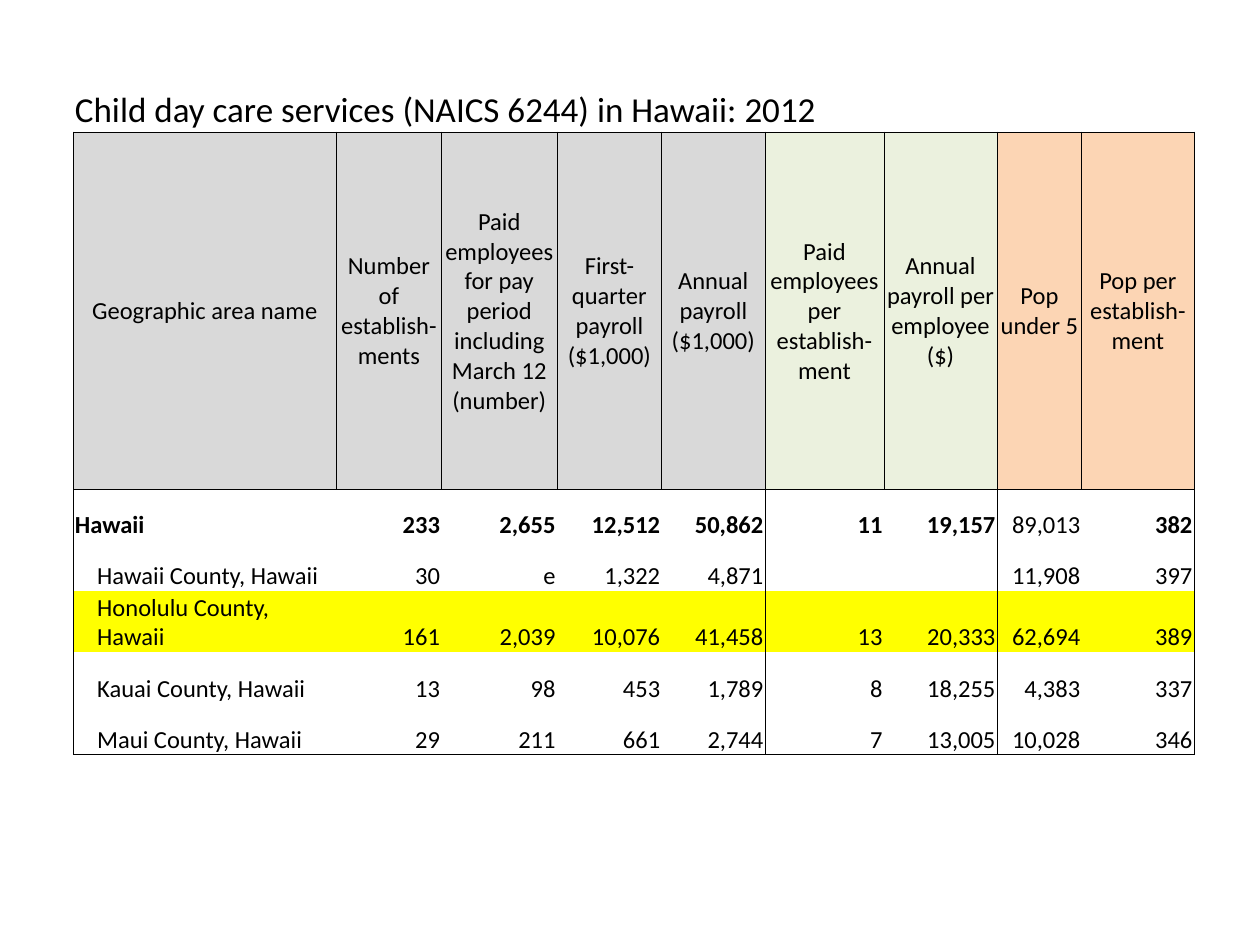
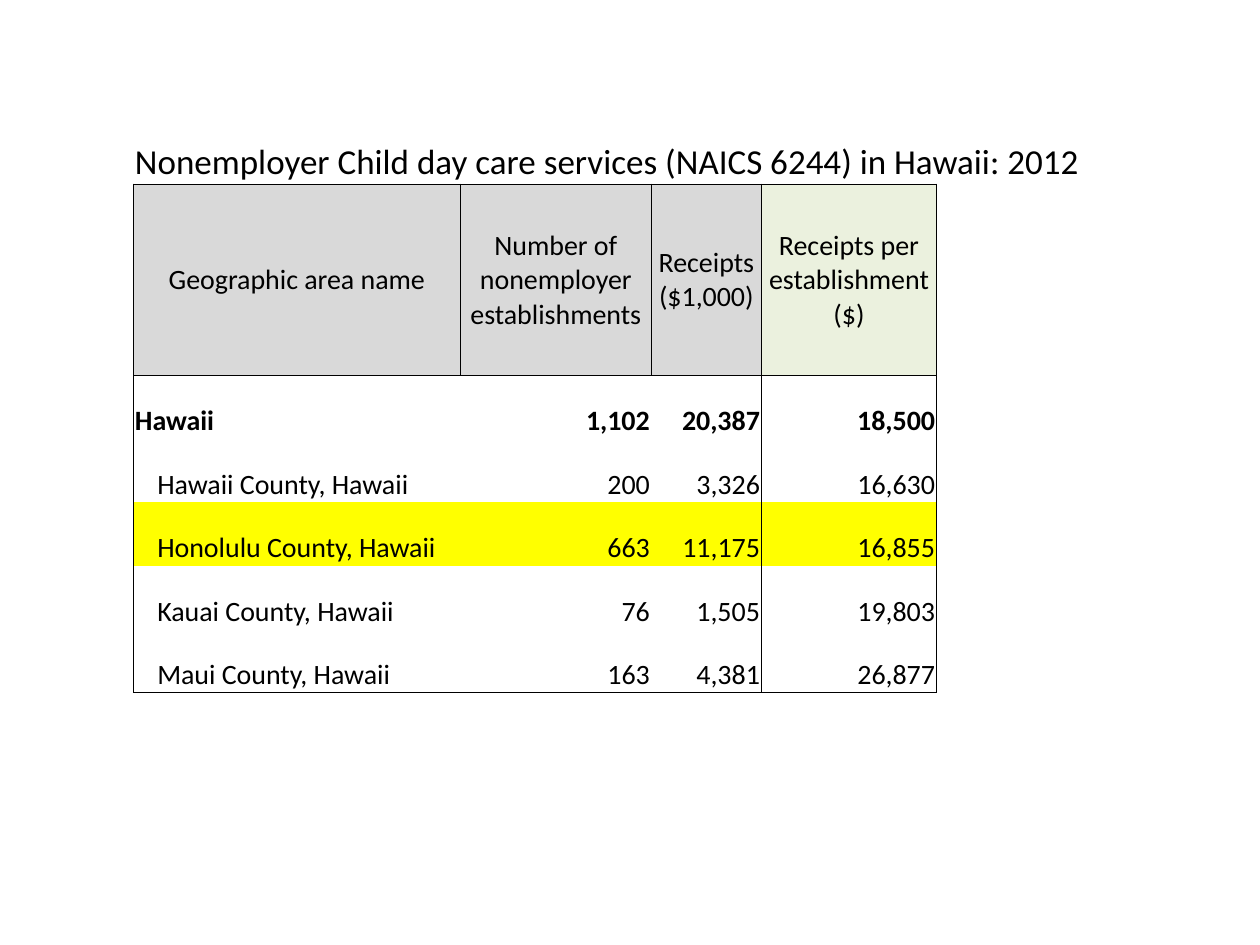
from lxml import etree
from pptx import Presentation
from pptx.dml.color import RGBColor
from pptx.enum.text import MSO_ANCHOR, PP_ALIGN
from pptx.oxml.ns import qn
from pptx.util import Cm, Pt

LEFT, CENTER, RIGHT = PP_ALIGN.LEFT, PP_ALIGN.CENTER, PP_ALIGN.RIGHT
MIDDLE, BOTTOM = MSO_ANCHOR.MIDDLE, MSO_ANCHOR.BOTTOM

# Shared look
COLORS = {"ink": "000000", "counts": "D9D9D9", "ratios": "EBF1DE",
          "population": "FCD5B4", "highlight": "FFFF00"}
FONT = "Calibri"
TITLE_SIZE = 20
TITLE_SPAN = 6
LINE_WIDTH = Pt(0.5)
PADDING, INDENT = Cm(0.03), Cm(0.48)
TITLE_ROW, HEADER_ROW, TOTAL_ROW, HIGHLIGHT_ROW = 0, 1, 2, 4

# Each column group is (fill name, column headings)
EMPLOYERS = {
    "title": "Child day care services (NAICS 6244) in Hawaii: 2012",
    "box": (1.48, 1.07),
    "size": 14,
    "widths": [5.3, 2.12, 2.33, 2.11, 2.08, 2.4, 2.28, 1.71, 2.26],
    "heights": [1.59, 7.2] + [1.03] * 5,
    "groups": [
        ("counts", ["Geographic area name", "Number of establish-ments",
                    "Paid employees for pay period including March 12 (number)",
                    "First-quarter payroll ($1,000)", "Annual payroll ($1,000)"]),
        ("ratios", ["Paid employees per establish-ment",
                    "Annual payroll per employee ($)"]),
        ("population", ["Pop under 5", "Pop per establish-ment"]),
    ],
    "plain_total": "Pop under 5",
    "rows": [
        ["Hawaii", "233", "2,655", "12,512", "50,862", "11", "19,157", "89,013", "382"],
        ["Hawaii County, Hawaii", "30", "e", "1,322", "4,871", "", "", "11,908", "397"],
        ["Honolulu County, Hawaii", "161", "2,039", "10,076", "41,458", "13", "20,333",
         "62,694", "389"],
        ["Kauai County, Hawaii", "13", "98", "453", "1,789", "8", "18,255", "4,383", "337"],
        ["Maui County, Hawaii", "29", "211", "661", "2,744", "7", "13,005", "10,028", "346"],
    ],
}
NONEMPLOYERS = {
    "title": "Nonemployer Child day care services (NAICS 6244) in Hawaii: 2012",
    "box": (2.69, 1.07),
    "size": 16,
    "widths": [6.59, 3.85, 2.22, 3.53, 2.59, 2.59],
    "heights": [2.64, 3.85] + [1.28] * 5,
    "groups": [
        ("counts", ["Geographic area name", "Number of nonemployer establishments",
                    "Receipts ($1,000)"]),
        ("ratios", ["Receipts per establishment ($)"]),
    ],
    "plain_total": None,
    "rows": [
        ["Hawaii", "1,102", "20,387", "18,500"],
        ["Hawaii County, Hawaii", "200", "3,326", "16,630"],
        ["Honolulu County, Hawaii", "663", "11,175", "16,855"],
        ["Kauai County, Hawaii", "76", "1,505", "19,803"],
        ["Maui County, Hawaii", "163", "4,381", "26,877"],
    ],
}


def write_cell(cell, text, size, align, anchor, bold=False, indent=PADDING):
    cell.margin_left, cell.margin_right = indent, PADDING
    cell.margin_top, cell.margin_bottom = PADDING, 0
    cell.vertical_anchor = anchor
    if not text:
        return
    p = cell.text_frame.paragraphs[0]
    p.alignment = align
    r = p.add_run()
    r.text = text
    r.font.name, r.font.size, r.font.bold = FONT, Pt(size), bold
    r.font.color.rgb = RGBColor.from_string(COLORS["ink"])


def set_borders(cell, drawn):
    """Draw the sides named in drawn and clear the others."""
    tc_pr = cell._tc.get_or_add_tcPr()
    for side in "LRTB":
        ln = etree.SubElement(tc_pr, qn(f"a:ln{side}"), w=str(LINE_WIDTH))
        if side in drawn:
            fill = etree.SubElement(ln, qn("a:solidFill"))
            etree.SubElement(fill, qn("a:srgbClr"), val=COLORS["ink"])
        else:
            etree.SubElement(ln, qn("a:noFill"))


def fill_cell(cell, color):
    if color:
        cell.fill.solid()
        cell.fill.fore_color.rgb = RGBColor.from_string(COLORS[color])
    else:
        cell.fill.background()


def ruled_sides(row, col, last_row, columns, group_edges):
    """Rule the header fully, the body only around its column groups."""
    if row == TITLE_ROW:
        return "B" if col < columns else ""
    edges = range(columns + 1) if row == HEADER_ROW else group_edges
    sides = ("L" if col in edges else "") + ("R" if col + 1 in edges else "")
    if col < columns:
        sides += "T" if row in (HEADER_ROW, TOTAL_ROW) else ""
        sides += "B" if row in (HEADER_ROW, last_row) else ""
    return sides


def add_area_table(s, data):
    widths, heights = data["widths"], data["heights"]
    left, top = data["box"]
    frame = s.shapes.add_table(len(heights), len(widths), Cm(left), Cm(top),
                               Cm(sum(widths)), Cm(sum(heights)))
    table = frame.table
    table.first_row = table.horz_banding = False
    for column, width in zip(table.columns, widths):
        column.width = Cm(width)
    for row, height in zip(table.rows, heights):
        row.height = Cm(height)

    headings, fills, group_edges = [], [], [0]
    for fill, names in data["groups"]:
        headings += names
        fills += [fill] * len(names)
        group_edges.append(len(headings))

    # Title across the top row
    table.cell(TITLE_ROW, 0).merge(table.cell(TITLE_ROW, TITLE_SPAN - 1))
    write_cell(table.cell(TITLE_ROW, 0), data["title"], TITLE_SIZE, LEFT, BOTTOM)

    # Column headings
    for col, heading in enumerate(headings):
        write_cell(table.cell(HEADER_ROW, col), heading, data["size"], CENTER, MIDDLE)

    # State total and counties
    for row, values in enumerate(data["rows"], TOTAL_ROW):
        for col, value in enumerate(values):
            is_total = row == TOTAL_ROW
            write_cell(table.cell(row, col), value, data["size"],
                       RIGHT if col else LEFT, BOTTOM,
                       bold=is_total and headings[col] != data["plain_total"],
                       indent=PADDING if col or is_total else INDENT)

    # Rules and fills
    for row in range(len(heights)):
        for col in range(len(widths)):
            cell = table.cell(row, col)
            set_borders(cell, ruled_sides(row, col, len(heights) - 1,
                                          len(headings), group_edges))
            color = None
            if col < len(headings):
                color = {HEADER_ROW: fills[col], HIGHLIGHT_ROW: "highlight"}.get(row)
            fill_cell(cell, color)


def main():
    prs = Presentation()
    prs.slide_width, prs.slide_height = Cm(25.4), Cm(19.05)
    blank = prs.slide_layouts[6]
    for data in (EMPLOYERS, NONEMPLOYERS):
        add_area_table(prs.slides.add_slide(blank), data)
    prs.save("out.pptx")


if __name__ == "__main__":
    main()
